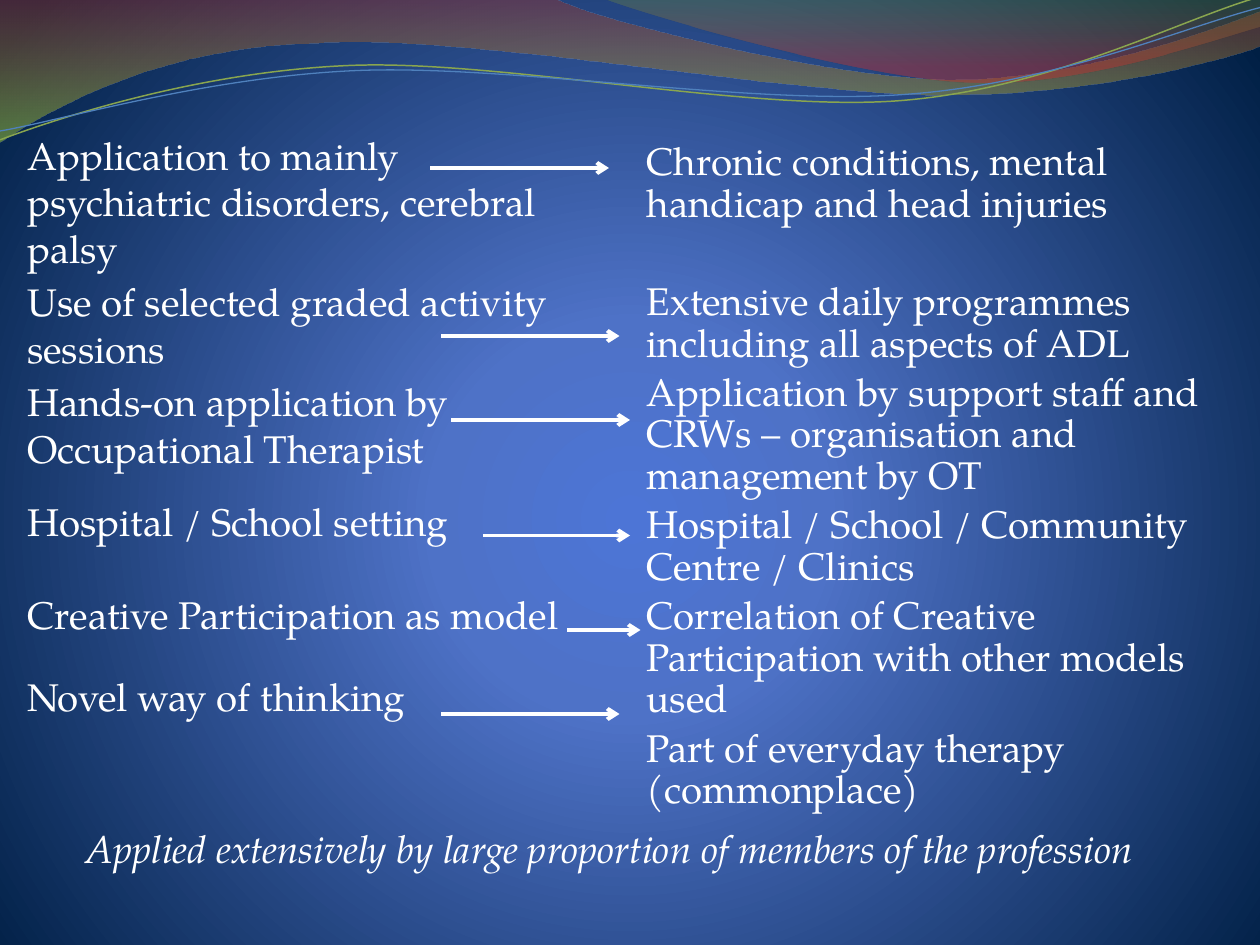
from math import cos, radians, sin

from lxml import etree
from pptx import Presentation
from pptx.dml.color import RGBColor
from pptx.enum.shapes import MSO_CONNECTOR
from pptx.enum.text import MSO_ANCHOR, PP_ALIGN
from pptx.oxml import parse_xml
from pptx.oxml.ns import nsdecls, qn
from pptx.util import Inches, Pt

STRAIGHT = MSO_CONNECTOR.STRAIGHT
TOP = MSO_ANCHOR.TOP
LEFT, CENTER = PP_ALIGN.LEFT, PP_ALIGN.CENTER

FONT = "TeX Gyre Pagella"
WHITE = "FFFFFF"
COLS, ROWS = 120, 90      # layout grid of the slide

prs = Presentation()
prs.slide_width, prs.slide_height = Inches(10), Inches(7.5)
COL, ROW = prs.slide_width / COLS, prs.slide_height / ROWS
WAVE_UNIT = prs.slide_width / 10

# Text of each column: (space before in points, wording)
BEFORE = [
    (4.4, "Application to mainly psychiatric disorders, cerebral palsy"),
    (4.4, "Use of selected graded activity sessions"),
    (4.4, "Hands-on application by Occupational Therapist"),
    (15.4, "Hospital / School setting"),
    (26.9, "Creative Participation as model"),
    (20.5, "Novel way of thinking"),
]
AFTER = [
    (4.4, "Chronic conditions, mental handicap and head injuries"),
    (32.3, "Extensive daily programmes including all aspects of ADL"),
    (4.4, "Application by support staff and CRWs – organisation and management by OT"),
    (4.4, "Hospital / School / Community Centre / Clinics"),
    (4.4, "Correlation of Creative Participation with other models used"),
    (4.4, "Part of everyday therapy (commonplace)"),
]
SUMMARY = [(4.4, "Applied extensively by large proportion of members of the profession")]

# Arrows: start column, end column, row
ARROWS = [(41, 58, 16), (42, 59, 32), (46, 60, 51),
          (43, 60, 40), (42, 59, 68), (54, 61, 60)]

# Wave outlines in tenths of the slide width: 2 numbers = line, 6 = Bezier curve
LARGE_WAVE = [(0, 0), (4.4, -0.01),
              (4.76, 0.17, 6.64, 0.63, 7.58, 0.63),
              (8.53, 0.63, 9.58, 0.26, 10, 0.09), (10.01, 0.36),
              (9.83, 0.44, 8.7, 0.76, 7.46, 0.75),
              (6.22, 0.75, 3.82, 0.28, 2.57, 0.34),
              (1.29, 0.36, 0.46, 0.83, -0.01, 1.13)]
SMALL_WAVE = [(4.79, -0.01), (5.09, 0.11, 6.82, 0.62, 7.69, 0.65),
              (8.56, 0.69, 9.61, 0.32, 10, 0.21), (10, 0)]
GREEN_LINE = [(0, 1.11), (0.48, 0.93, 1.58, 0.57, 2.77, 0.52),
              (3.95, 0.47, 5.93, 0.89, 7.13, 0.8),
              (8.33, 0.71, 9.38, 0.15, 9.98, -0.02)]
BLUE_LINE = [(0, 1.04), (0.47, 0.96, 1.64, 0.61, 2.83, 0.56),
             (4.03, 0.51, 5.97, 0.84, 7.17, 0.75),
             (8.36, 0.67, 9.41, 0.21, 10, 0.06)]
LINE_TILT = -2.7
LINE_CENTER = (4.99, 0.58)
DOWNWARD = '<a:lin ang="5400000" scaled="0"/>'
RADIAL = ('<a:path path="circle">'
          '<a:fillToRect l="10000" t="110000" r="10000" b="100000"/></a:path>')


def rgb(value):
    return RGBColor.from_string(value)


def set_gradient(fill, root, stops, direction):
    """Stops are (position %, colour, opacity %)."""
    fill.gradient()
    old = next(root.iter(qn("a:gradFill")))
    gs = "".join(
        f'<a:gs pos="{pos * 1000}"><a:srgbClr val="{color}">'
        f'<a:alpha val="{alpha * 1000}"/></a:srgbClr></a:gs>'
        for pos, color, alpha in stops)
    old.getparent().replace(old, parse_xml(
        f'<a:gradFill {nsdecls("a")} rotWithShape="1">'
        f'<a:gsLst>{gs}</a:gsLst>{direction}</a:gradFill>'))


def untilt(x, y, tilt):
    """Place a point as it lies before the shape is turned by tilt degrees."""
    cx, cy = LINE_CENTER
    a, dx, dy = radians(-tilt), x - cx, y - cy
    return (round((cx + dx * cos(a) - dy * sin(a)) * WAVE_UNIT),
            round((cy + dx * sin(a) + dy * cos(a)) * WAVE_UNIT))


def add_wave(s, outline, stops=None, color=None, width=None, tilt=0):
    segs = [[untilt(x, y, tilt) for x, y in zip(seg[::2], seg[1::2])]
            for seg in outline]
    builder = s.shapes.build_freeform(*segs[0][0])
    builder.add_line_segments([seg[-1] for seg in segs[1:]], close=stops is not None)
    sp = builder.convert_to_shape()
    # Bend the straight segments into Bezier curves
    for line_to, seg in zip(list(sp.element.iter(qn("a:lnTo"))), segs[1:]):
        if len(seg) == 3:
            curve = etree.Element(qn("a:cubicBezTo"))
            for x, y in seg:
                etree.SubElement(curve, qn("a:pt"), x=str(x - sp.left), y=str(y - sp.top))
            line_to.getparent().replace(line_to, curve)
    sp.rotation = tilt
    sp.shadow.inherit = False
    if stops:
        set_gradient(sp.fill, sp.element, stops, DOWNWARD)
        sp.line.fill.background()
    else:
        sp.fill.background()
        sp.line.color.rgb = rgb(color)
        sp.line.width = Pt(width)


def add_text(s, box, paragraphs, size=22, color=WHITE, italic=False,
             align=LEFT, spacing=1.0):
    left, top, width, height = box
    tf = s.shapes.add_textbox(round(left * COL), round(top * ROW),
                              round(width * COL), round(height * ROW)).text_frame
    tf.word_wrap = True
    tf.vertical_anchor = TOP
    tf.margin_left = tf.margin_right = Inches(0.05)
    tf.margin_top = tf.margin_bottom = Inches(0.05)
    for i, (before, text) in enumerate(paragraphs):
        p = tf.add_paragraph() if i else tf.paragraphs[0]
        p.alignment, p.line_spacing, p.space_before = align, spacing, Pt(before)
        r = p.add_run()
        r.text = text
        r.font.name, r.font.size, r.font.italic = FONT, Pt(size), italic
        r.font.color.rgb = rgb(color)


def add_arrow(s, start, end, row):
    y = round(row * ROW)
    arrow = s.shapes.add_connector(STRAIGHT, round(start * COL), y, round(end * COL), y)
    arrow.line.color.rgb = rgb(WHITE)
    arrow.line.width = Pt(2.25)
    spPr = arrow.element.spPr
    etree.SubElement(spPr.find(qn("a:ln")), qn("a:tailEnd"), type="arrow")
    etree.SubElement(spPr, qn("a:effectLst"))


def add_backdrop(s):
    set_gradient(s.background.fill, s.element,
                 [(0, "4D75D6", 100), (25, "4E72C7", 100), (100, "001F44", 100)], RADIAL)
    add_wave(s, LARGE_WAVE, stops=[(0, "973330", 45), (100, "95C238", 55)])
    add_wave(s, SMALL_WAVE, stops=[(0, "769537", 30), (80, "BE3330", 45)])
    add_wave(s, GREEN_LINE, color="89A54F", width=0.85, tilt=LINE_TILT)
    add_wave(s, BLUE_LINE, color="4F81BD", width=0.75, tilt=LINE_TILT)


def add_comparison(s):
    add_text(s, (2, 12, 53, 63), BEFORE)
    add_text(s, (61, 13, 59, 67), AFTER, spacing=0.9)
    add_text(s, (0, 78, 116, 9), SUMMARY, italic=True, align=CENTER)
    for arrow in ARROWS:
        add_arrow(s, *arrow)


def main():
    s = prs.slides.add_slide(prs.slide_layouts[6])
    add_backdrop(s)
    add_comparison(s)
    prs.save("out.pptx")


if __name__ == "__main__":
    main()
